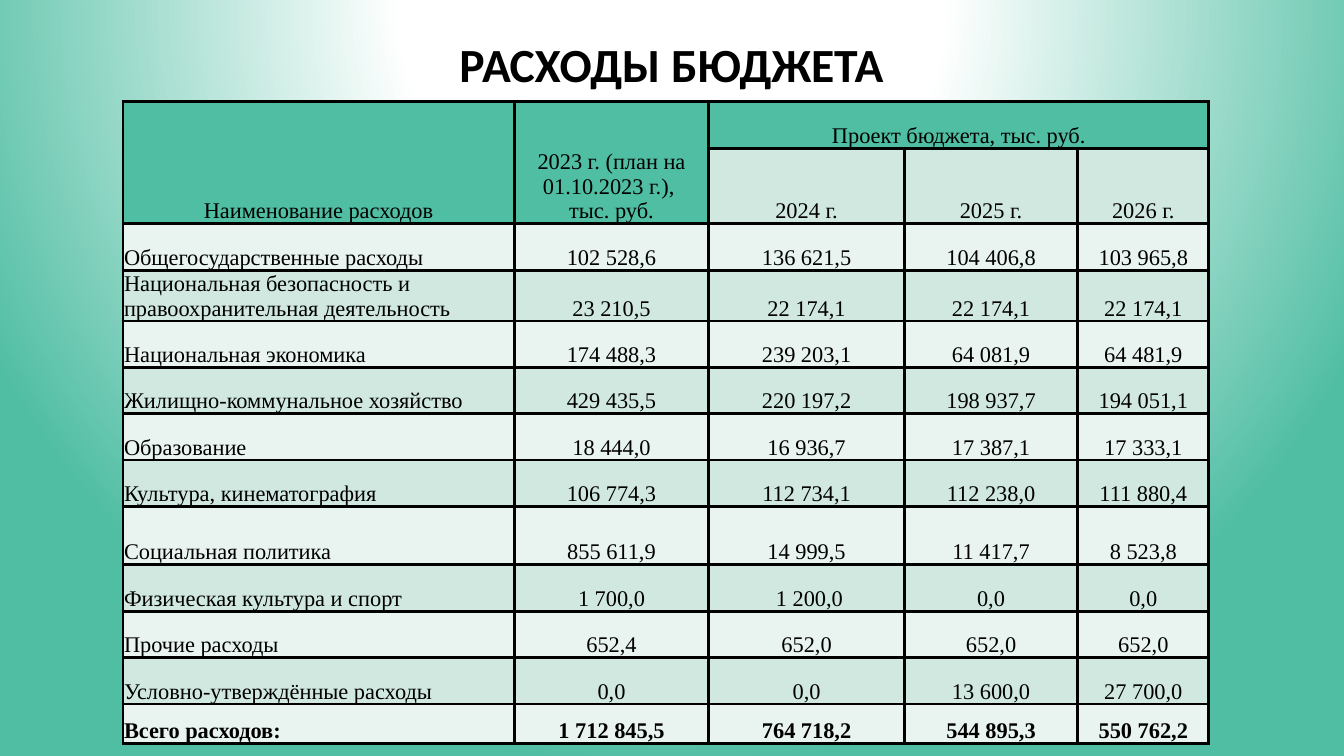
from typing import NamedTuple

from lxml import etree
from pptx import Presentation
from pptx import util as u
from pptx.dml.color import RGBColor
from pptx.enum import text as t
from pptx.oxml import parse_xml
from pptx.oxml.ns import nsdecls, qn

INK, TEAL, MINT, PALE = "000000", "50BEA3", "D0E8E0", "E9F4F0"
MID, LEFT = t.PP_ALIGN.CENTER, t.PP_ALIGN.LEFT


class Line(NamedTuple):
    name: str
    sums: tuple[str, ...]
    high: float = 0.46
    bold: bool = False


LINES = [
    Line("Общегосударственные расходы", ("102 528,6", "136 621,5", "104 406,8", "103 965,8")),
    Line("Национальная безопасность и правоохранительная деятельность",
         ("23 210,5", "22 174,1", "22 174,1", "22 174,1")),
    Line("Национальная экономика", ("174 488,3", "239 203,1", "64 081,9", "64 481,9")),
    Line("Жилищно-коммунальное хозяйство", ("429 435,5", "220 197,2", "198 937,7", "194 051,1")),
    Line("Образование", ("18 444,0", "16 936,7", "17 387,1", "17 333,1")),
    Line("Культура, кинематография", ("106 774,3", "112 734,1", "112 238,0", "111 880,4")),
    Line("Социальная политика", ("855 611,9", "14 999,5", "11 417,7", "8 523,8"), high=0.58),
    Line("Физическая культура и спорт", ("1 700,0", " 1 200,0", "0,0", "0,0")),
    Line("Прочие расходы", ("652,4", "652,0", "652,0", "652,0")),
    Line("Условно-утверждённые расходы", ("0,0", "0,0", "13 600,0", "27 700,0")),
    Line("Всего расходов:", ("1 712 845,5", "764 718,2", "544 895,3", "550 762,2"),
         high=0.39, bold=True),
]
WIDE = [3.88, 1.93, 1.94, 1.72, 1.3]
HIGH = [0.46, 0.1] + [line.high for line in LINES]


def color(code: str) -> RGBColor:
    return RGBColor.from_string(code)


def write(frame, words: str, *, size: float = 16, font: str = "Times New Roman",
          bold: bool = False, align=MID, gap: float = 1.0) -> None:
    frame.text = words
    for para in frame.paragraphs:
        para.alignment = align
        para.line_spacing = gap
        for run in para.runs:
            run.font.size = u.Pt(size)
            run.font.name = font
            run.font.bold = bold
            run.font.color.rgb = color(INK)


def style(cell, tone: str) -> None:
    """Set the cell's margins, borders and fill."""
    cell.margin_left = cell.margin_right = cell.margin_top = u.Inches(0.01)
    cell.margin_bottom = 0
    cell.vertical_anchor = t.MSO_ANCHOR.BOTTOM
    props = cell._tc.get_or_add_tcPr()
    for side in ("lnL", "lnR", "lnT", "lnB"):
        edge = etree.SubElement(props, qn(f"a:{side}"), w=str(u.Pt(2.25)))
        fill = etree.SubElement(edge, qn("a:solidFill"))
        etree.SubElement(fill, qn("a:srgbClr"), val=INK)
    cell.fill.solid()
    cell.fill.fore_color.rgb = color(tone)


def paint(slide) -> None:
    """Fill the background with a round gradient."""
    slide.background.fill.gradient()
    old = slide.element.find(".//" + qn("a:gradFill"))
    stops = "".join(f'<a:gs pos="{pos * 1000}"><a:srgbClr val="{code}"/></a:gs>'
                    for pos, code in ((0, "FFFFFF"), (35, "FFFFFF"), (100, TEAL)))
    new = parse_xml(
        f'<a:gradFill {nsdecls("a")} rotWithShape="1"><a:gsLst>{stops}</a:gsLst>'
        '<a:path path="circle"><a:fillToRect l="50000" t="-80000" r="50000" b="180000"/>'
        '</a:path></a:gradFill>')
    old.getparent().replace(old, new)


def head(slide) -> None:
    title = slide.shapes.title
    title.left, title.top = u.Inches(1), u.Inches(0.32)
    title.width, title.height = u.Inches(11.32), u.Inches(0.69)
    frame = title.text_frame
    frame.word_wrap = True
    frame.auto_size = t.MSO_AUTO_SIZE.NONE
    frame.vertical_anchor = t.MSO_ANCHOR.MIDDLE
    write(frame, "РАСХОДЫ БЮДЖЕТА", size=34, font="Calibri", bold=True, gap=0.9)


def grid(slide) -> None:
    table = slide.shapes.add_table(
        len(HIGH), len(WIDE), u.Inches(1.22), u.Inches(1.01),
        u.Inches(sum(WIDE)), u.Inches(sum(HIGH))).table
    table.first_row = table.horz_banding = False
    for col, wide in zip(table.columns, WIDE):
        col.width = u.Inches(wide)
    for row, high in zip(table.rows, HIGH):
        row.height = u.Inches(high)

    # Fills: header, then alternating bands
    for r in range(len(HIGH)):
        for c in range(len(WIDE)):
            top = r == 0 or (r == 1 and c < 2)
            style(table.cell(r, c), TEAL if top else MINT if r % 2 else PALE)

    # Header
    for c in (0, 1):
        table.cell(0, c).merge(table.cell(1, c))
    table.cell(0, 2).merge(table.cell(0, 4))
    heads = ("Наименование расходов", "2023 г. (план на 01.10.2023 г.), \nтыс. руб.",
             "Проект бюджета, тыс. руб.")
    for c, words in enumerate(heads):
        write(table.cell(0, c).text_frame, words)
    for c, year in enumerate((2024, 2025, 2026), 2):
        write(table.cell(1, c).text_frame, f"{year} г.")

    # Expenses
    for r, line in enumerate(LINES, 2):
        for c, words in enumerate((line.name, *line.sums)):
            write(table.cell(r, c).text_frame, words, bold=line.bold,
                  align=MID if c else LEFT)


def main() -> None:
    deck = Presentation()
    deck.slide_width, deck.slide_height = u.Inches(13.33), u.Inches(7.5)
    slide = deck.slides.add_slide(deck.slide_layouts[5])
    paint(slide)
    head(slide)
    grid(slide)
    deck.save("out.pptx")


if __name__ == "__main__":
    main()
